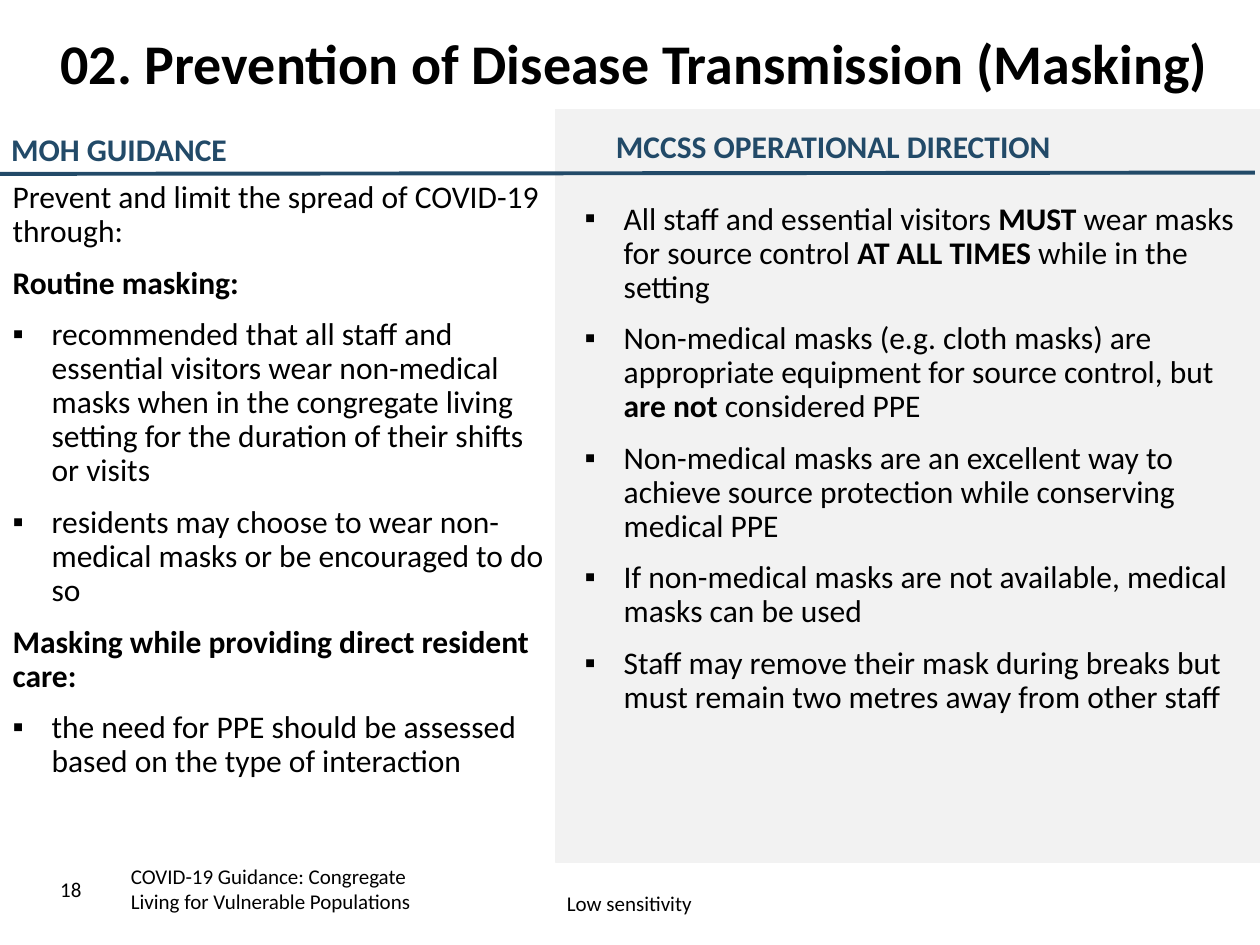
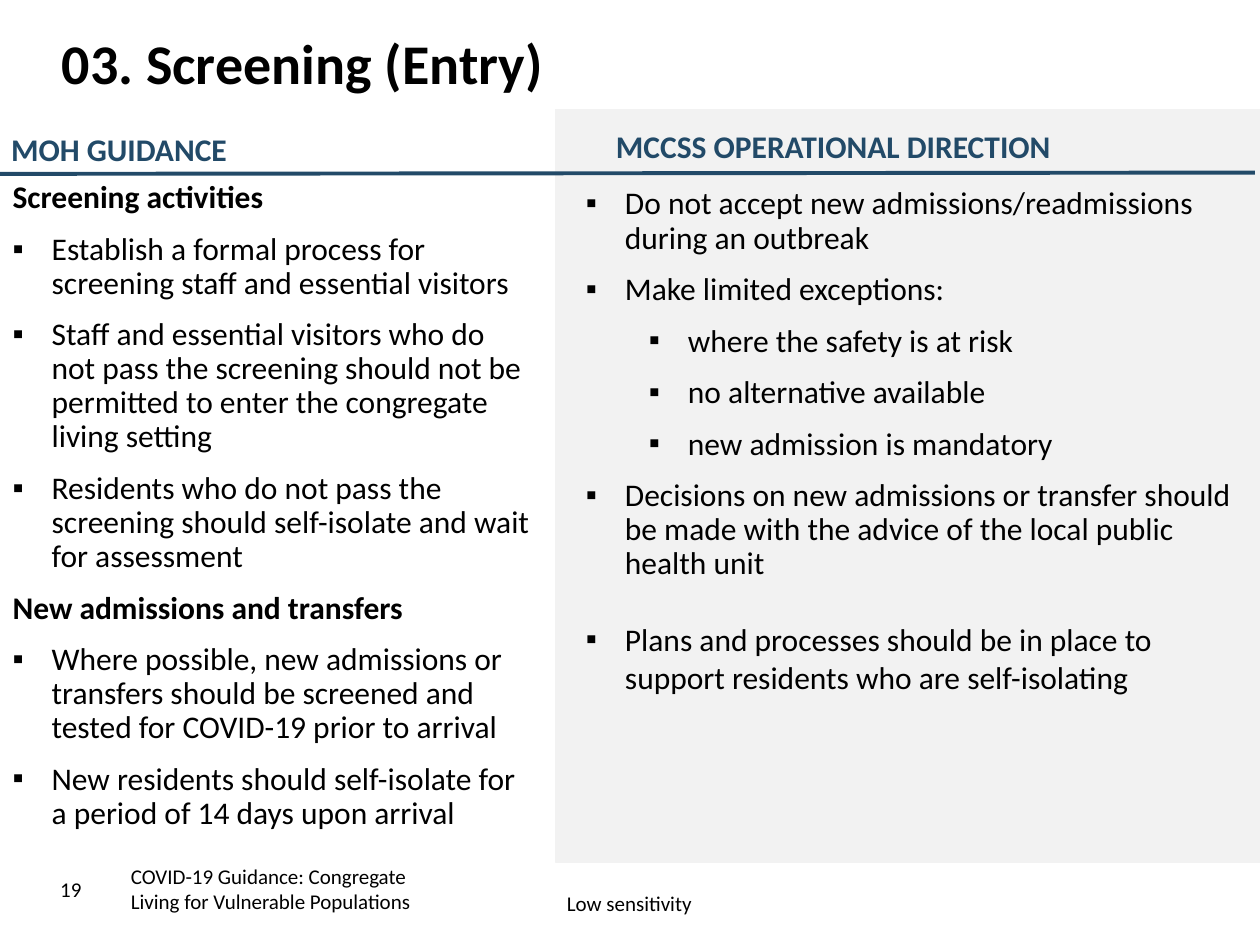
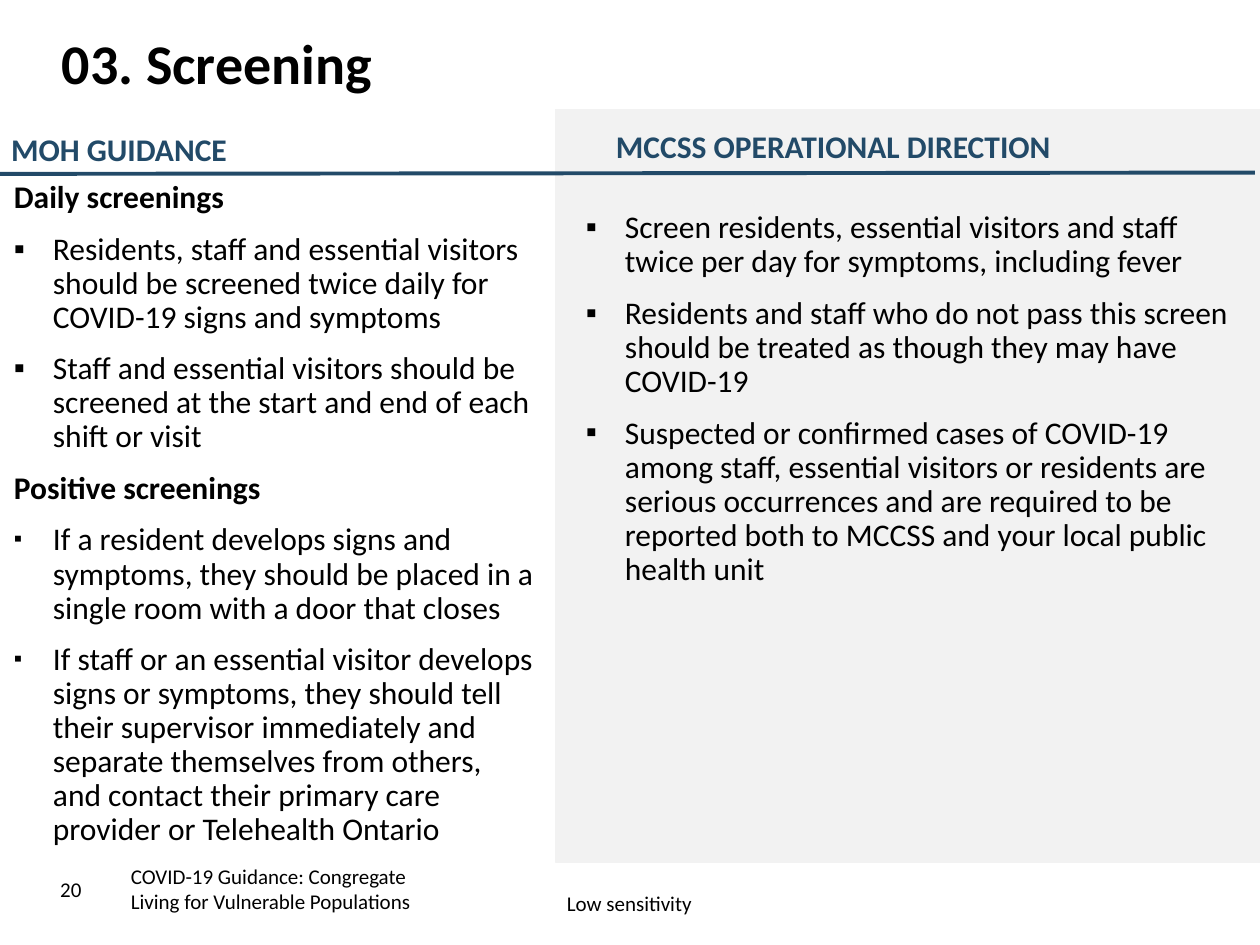
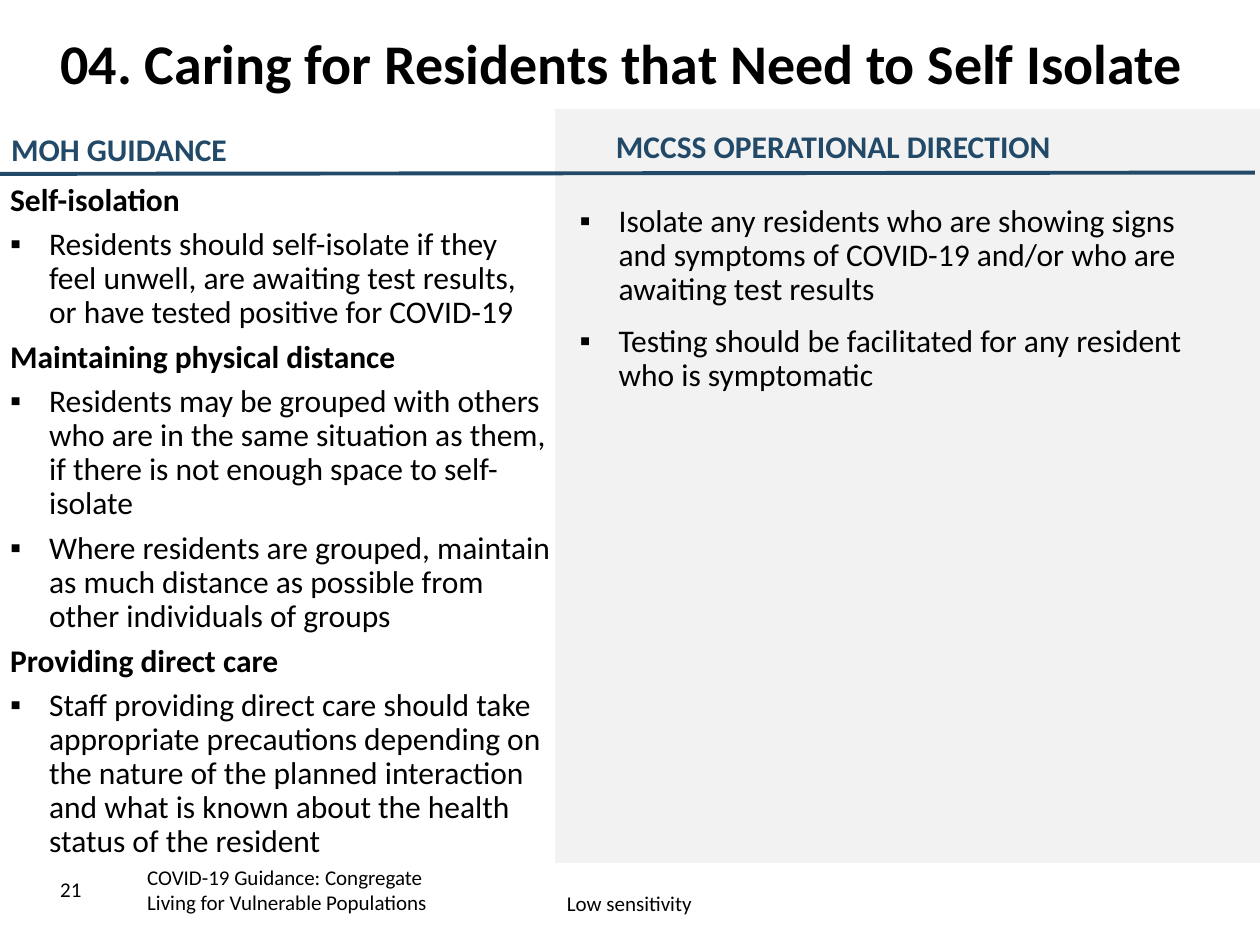
"""Build four guidance slides that set ministry guidance beside operational direction."""
from dataclasses import dataclass

from lxml.etree import SubElement
from pptx import Presentation
from pptx.dml.color import RGBColor as RGB
from pptx.enum.shapes import MSO_CONNECTOR as LINE, MSO_SHAPE as SHAPE
from pptx.enum.text import MSO_ANCHOR as ANCHOR, MSO_AUTO_SIZE as FIT, PP_ALIGN as ALIGN
from pptx.oxml.ns import qn
from pptx.util import Inches, Pt


@dataclass(frozen=True)
class Theme:
    font: str = "Calibri"
    ink: RGB = RGB(0, 0, 0)
    navy: RGB = RGB(0x22, 0x4A, 0x68)
    panel: RGB = RGB(0xF2, 0xF2, 0xF2)
    title: Pt = Pt(32)
    text: Pt = Pt(18)
    footer: Pt = Pt(12)
    rule: Pt = Pt(2.25)
    edge: Pt = Pt(1)


theme = Theme()
prs = Presentation()
prs.slide_width, prs.slide_height = Inches(10), Inches(7.5)
col, row = prs.slide_width / 100, prs.slide_height / 75

HANG = 0.31
LEVELS = {
    "plain": {"indent": 0, "bullet": None},
    "head": {"indent": 0, "bullet": None},
    "point": {"indent": HANG, "bullet": 100},
    "small": {"indent": HANG, "bullet": 75},
    "sub": {"indent": HANG + 0.5, "bullet": 100},
    "late": {"indent": HANG, "bullet": 100, "spacing": 1.0, "before": 22},
}


def place(shape, left, top, width, height):
    """Put a shape on the grid of 100 columns and 75 rows."""
    spots = {"left": left * col, "top": top * row, "width": width * col, "height": height * row}
    for side, length in spots.items():
        setattr(shape, side, round(length))
    return shape


def write(shape, items, size, color=theme.ink, anchor=ANCHOR.TOP, align=ALIGN.LEFT,
          insets=(0.1, 0.05, 0.1, 0.05), spacing=1.0, before=0):
    """Write (level, text) items into a shape; ** switches bold on and off."""
    frame = shape.text_frame
    for name, value in {"word_wrap": True, "auto_size": FIT.NONE, "vertical_anchor": anchor}.items():
        setattr(frame, name, value)
    for side, inset in zip(("left", "top", "right", "bottom"), insets):
        setattr(frame, f"margin_{side}", Inches(inset))
    for index, (level, text) in enumerate(items):
        look = LEVELS[level]
        para = frame.paragraphs[0] if index == 0 else frame.add_paragraph()
        props = para._p.get_or_add_pPr()
        props.set("marL", str(Inches(look["indent"])))
        props.set("indent", str(-Inches(HANG) if look["bullet"] else 0))
        if look["bullet"]:
            SubElement(props, qn("a:buSzPct"), val=str(look["bullet"] * 1000))
            SubElement(props, qn("a:buFont"), typeface="Arial")
            SubElement(props, qn("a:buChar"), char="▪")
        else:
            SubElement(props, qn("a:buNone"))
        layout = {
            "level": 1 if level == "sub" else 0,
            "alignment": align,
            "line_spacing": look.get("spacing", spacing),
            "space_before": Pt(look.get("before", before) if index else 0),
            "space_after": Pt(0),
        }
        for name, value in layout.items():
            setattr(para, name, value)
        for part, words in enumerate(text.split("**")):
            if not words:
                continue
            run = para.add_run()
            run.text = words
            style = {"name": theme.font, "size": size, "bold": level == "head" or part % 2 == 1}
            for name, value in style.items():
                setattr(run.font, name, value)
            run.font.color.rgb = color


TIGHT = (0.07, 0.04, 0.07, 0.04)
DEFAULT = (0.1, 0.05, 0.1, 0.05)
SOURCE = [("plain", "COVID-19 Guidance: Congregate Living for Vulnerable Populations")]
SOURCE_SPOT = (9.4, 68.5, 27.5, 4)

topics = [
    {
        "title": "02. Prevention of Disease Transmission (Masking)",
        "title_spot": (3.8, 2.4, 94.1, 5.3),
        "guidance_spot": (0, 14, 44.1, 52.9),
        "guidance_insets": (0.1, 0.04, 0.07, 0.04),
        "guidance": [
            ("plain", "Prevent and limit the spread of COVID-19 through:"),
            ("head", "Routine masking:"),
            ("point", "recommended that all staff and essential visitors wear non-medical masks when in "
                      "the congregate living setting for the duration of their shifts or visits"),
            ("point", "residents may choose to wear non-medical masks or be encouraged to do so"),
            ("head", "Masking while providing direct resident care:"),
            ("point", "the need for PPE should be assessed based on the type of interaction"),
        ],
        "direction_spot": (45.7, 15.7, 53.9, 49.7),
        "direction_insets": TIGHT,
        "direction": [
            ("point", "All staff and essential visitors **MUST** wear masks for source control "
                      "**AT ALL TIMES **while in the setting"),
            ("point", "Non-medical masks (e.g. cloth masks) are appropriate equipment for source "
                      "control, but **are not** considered PPE"),
            ("point", "Non-medical masks are an excellent way to achieve source protection while "
                      "conserving medical PPE"),
            ("point", "If non-medical masks are not available, medical masks can be used"),
            ("point", "Staff may remove their mask during breaks but must remain two metres away "
                      "from other staff"),
        ],
    },
    {
        "title": "03. Screening (Entry)",
        "title_spot": (3.9, 2.4, 68.7, 8.5),
        "guidance_spot": (0.3, 14, 42.5, 54.2),
        "guidance_insets": TIGHT,
        "guidance": [
            ("head", "Screening activities"),
            ("point", "Establish a formal process for screening staff and essential visitors"),
            ("point", "Staff and essential visitors who do not pass the screening should not be "
                      "permitted to enter the congregate living setting"),
            ("point", "Residents who do not pass the screening should self-isolate and wait for "
                      "assessment"),
            ("head", "New admissions and transfers"),
            ("point", "Where possible, new admissions or transfers should be screened and tested for "
                      "COVID-19 prior to arrival"),
            ("point", "New residents should self-isolate for a period of 14 days upon arrival"),
        ],
        "direction_spot": (45.5, 14.4, 54.1, 41.6),
        "direction_insets": DEFAULT,
        "direction": [
            ("point", "Do not accept new admissions/readmissions during an outbreak"),
            ("point", "Make limited exceptions:"),
            ("sub", "where the safety is at risk"),
            ("sub", "no alternative available"),
            ("sub", "new admission is mandatory"),
            ("point", "Decisions on new admissions or transfer should be made with the advice of the "
                      "local public health unit"),
            ("late", "Plans and processes should be in place to support residents who are "
                     "self-isolating"),
        ],
    },
    {
        "title": "03. Screening",
        "title_spot": (3.9, 2.4, 68.7, 8.5),
        "guidance_spot": (0.4, 14, 42.5, 54),
        "guidance_insets": (0.07, 0.04, 0.04, 0.04),
        "guidance": [
            ("head", "Daily screenings"),
            ("point", "Residents, staff and essential visitors should be screened twice daily for "
                      "COVID-19 signs and symptoms"),
            ("point", "Staff and essential visitors should be screened at the start and end of each "
                      "shift or visit"),
            ("head", "Positive screenings"),
            ("small", "If a resident develops signs and symptoms, they should be placed in a single "
                      "room with a door that closes"),
            ("small", "If staff or an essential visitor develops signs or symptoms, they should tell "
                      "their supervisor immediately and separate themselves from others, and contact "
                      "their primary care provider or Telehealth Ontario"),
        ],
        "direction_spot": (45.5, 16.3, 53.5, 35.2),
        "direction_insets": DEFAULT,
        "direction": [
            ("point", "Screen residents, essential visitors and staff twice per day for symptoms, "
                      "including fever"),
            ("point", "Residents and staff who do not pass this screen should be treated as though "
                      "they may have COVID-19"),
            ("point", "Suspected or confirmed cases of COVID-19 among staff, essential visitors or "
                      "residents are serious occurrences and are required to be reported both to "
                      "MCCSS and your local public health unit"),
        ],
    },
    {
        "title": "04. Caring for Residents that Need to Self Isolate",
        "title_spot": (3.8, 2.4, 91.5, 8.5),
        "guidance_spot": (0, 14.1, 44.1, 54.6),
        "guidance_insets": (0.08, 0.05, 0.04, 0),
        "guidance_before": 6,
        "guidance": [
            ("head", "Self-isolation"),
            ("point", "Residents should self-isolate if they feel unwell, are awaiting test results, "
                      "or have tested positive for COVID-19"),
            ("head", "Maintaining physical distance"),
            ("point", "Residents may be grouped with others who are in the same situation as them, "
                      "if there is not enough space to self-isolate"),
            ("point", "Where residents are grouped, maintain as much distance as possible from other "
                      "individuals of groups"),
            ("head", "Providing direct care"),
            ("point", "Staff providing direct care should take appropriate precautions depending on "
                      "the nature of the planned interaction and what is known about the health "
                      "status of the resident"),
        ],
        "direction_spot": (45.3, 15.9, 50.4, 20.9),
        "direction_insets": TIGHT,
        "direction": [
            ("point", "Isolate any residents who are showing signs and symptoms of COVID-19 and/or "
                      "who are awaiting test results"),
            ("point", "Testing should be facilitated for any resident who is symptomatic"),
        ],
        "source_spot": (10.7, 68.6, 36.7, 4),
        "source": [("plain", "COVID-19 Guidance: Congregate"),
                   ("plain", "Living for Vulnerable Populations")],
    },
]

two_content = prs.slide_layouts[3]
for number, topic in enumerate(topics, start=18):
    slide = prs.slides.add_slide(two_content)
    shapes = slide.shapes
    heading = shapes.title

    panel = place(shapes.add_shape(SHAPE.RECTANGLE, 0, 0, 0, 0), 44.1, 8.7, 56.3, 59.7)
    panel.shadow.inherit = False
    panel.fill.solid()
    panel.fill.fore_color.rgb = panel.line.color.rgb = theme.panel
    panel.line.width = theme.edge
    heading._element.addprevious(panel._element)

    place(heading, *topic["title_spot"])
    write(heading, [("head", topic["title"])], theme.title, spacing=0.9)

    for slot, column in enumerate(("guidance", "direction"), start=1):
        body = place(slide.placeholders[slot], *topic[f"{column}_spot"])
        write(body, topic[column], theme.text, insets=topic[f"{column}_insets"],
              spacing=0.9, before=topic.get(f"{column}_before", 10))

    rule = shapes.add_connector(LINE.STRAIGHT, 0, round(13.8 * row), round(99.6 * col), round(13.7 * row))
    rule.line.color.rgb = theme.navy
    rule.line.width = theme.rule
    SubElement(rule._element.spPr, qn("a:effectLst"))

    for label, spot in (("MOH GUIDANCE", (-0.1, 9.8, 28.3, 4)),
                        ("MCCSS OPERATIONAL DIRECTION", (47.9, 9.6, 45.3, 4))):
        write(place(shapes.add_textbox(0, 0, 0, 0), *spot), [("head", label)], theme.text, theme.navy)

    for items, spot, align in (
        ([("plain", str(number))], (3.8, 68.6, 5.6, 4), ALIGN.LEFT),
        (topic.get("source", SOURCE), topic.get("source_spot", SOURCE_SPOT), ALIGN.LEFT),
        ([("plain", "Low sensitivity")], (36.2, 69.7, 27.5, 4), ALIGN.CENTER),
    ):
        write(place(shapes.add_textbox(0, 0, 0, 0), *spot), items, theme.footer,
              anchor=ANCHOR.MIDDLE, align=align)

prs.save("out.pptx")
